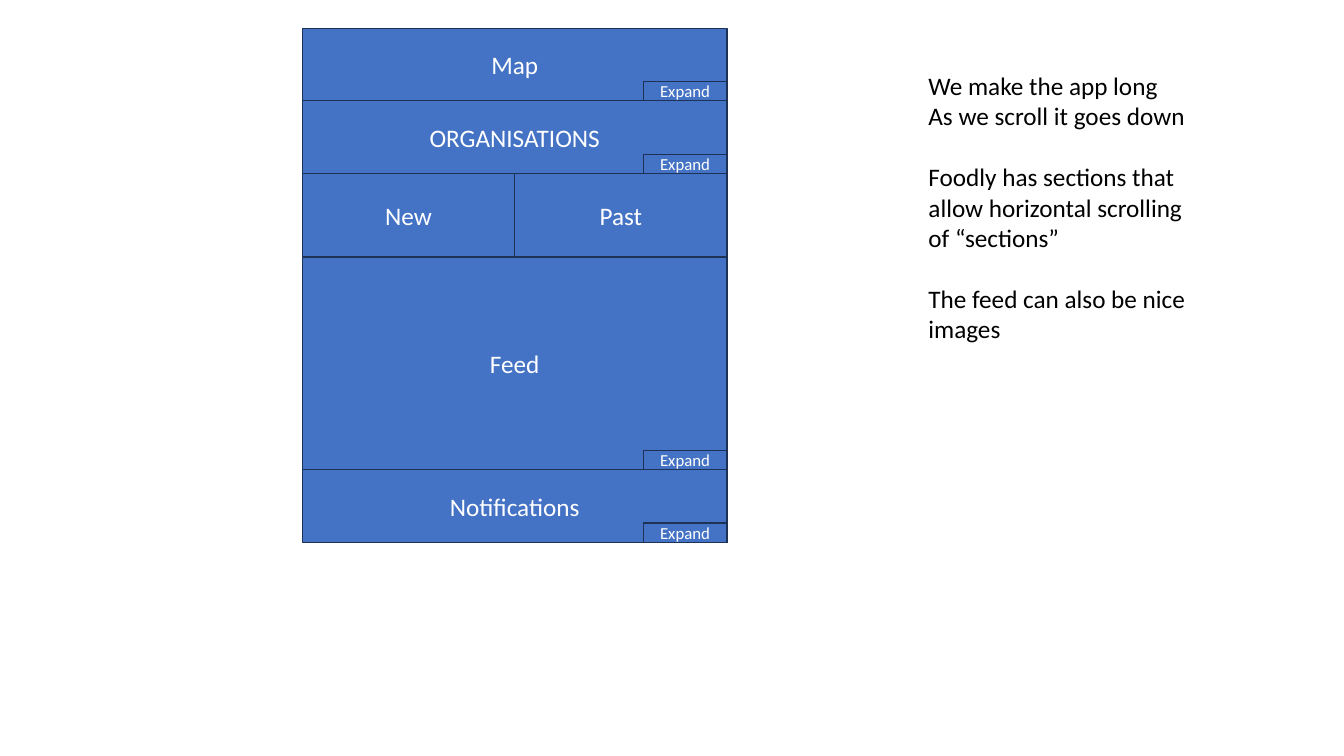
from pptx import Presentation
from pptx.dml.color import RGBColor
from pptx.enum.shapes import MSO_SHAPE
from pptx.enum.text import MSO_ANCHOR, MSO_AUTO_SIZE, PP_ALIGN
from pptx.util import Inches, Pt

RECT = MSO_SHAPE.RECTANGLE
MIDDLE = MSO_ANCHOR.MIDDLE
GROW = MSO_AUTO_SIZE.SHAPE_TO_FIT_TEXT
LEFT, CENTER = PP_ALIGN.LEFT, PP_ALIGN.CENTER
BLUE, NAVY, WHITE, BLACK = "4472C4", "1E3256", "FFFFFF", "000000"

ROWS = [
    (0.72, ["Map"], True),
    (0.72, ["ORGANISATIONS"], True),
    (0.83, ["New", "Past"], False),
    (2.11, ["Feed"], True),
    (0.72, ["Notifications"], True),
]
NOTES = [
    ("We make the app long", 0),
    ("As we scroll it goes down", 0),
    ("Foodly has sections that allow horizontal scrolling of “sections”", 22),
    ("The feed can also be nice images", 22),
]


def color(code):
    """Turn a hex string into a colour."""
    return RGBColor.from_string(code)


def write(para, text, size=18, ink=BLACK, align=LEFT, before=0):
    """Put formatted text into a paragraph."""
    para.alignment = align
    para.space_before = Pt(before)
    run = para.add_run()
    run.text = text
    run.font.name = "Calibri"
    run.font.size = Pt(size)
    run.font.color.rgb = color(ink)


def add_block(slide, text, left, top, width, height, size=18):
    """Draw one labelled rectangle."""
    block = slide.shapes.add_shape(
        RECT, Inches(left), Inches(top), Inches(width), Inches(height))
    block.shadow.inherit = False
    block.fill.solid()
    block.fill.fore_color.rgb = color(BLUE)
    block.line.color.rgb = color(NAVY)
    block.line.width = Pt(1)
    frame = block.text_frame
    frame.word_wrap = True
    frame.vertical_anchor = MIDDLE
    write(frame.paragraphs[0], text, size=size, ink=WHITE, align=CENTER)


def add_app(slide, left, top, width):
    """Stack the app sections downward, with their expand buttons."""
    wide, high = 0.83, 0.19
    for height, labels, expands in ROWS:
        part = width / len(labels)
        for col, label in enumerate(labels):
            add_block(slide, label, left + col * part, top, part, height)
        top += height
        if expands:
            add_block(slide, "Expand", left + width - wide, top - high,
                      wide, high, size=12)


def add_notes(slide, left, top, width, height):
    """Write the design notes in a text box."""
    box = slide.shapes.add_textbox(
        Inches(left), Inches(top), Inches(width), Inches(height))
    frame = box.text_frame
    frame.word_wrap = True
    frame.auto_size = GROW
    for row, (text, before) in enumerate(NOTES):
        para = frame.add_paragraph() if row else frame.paragraphs[0]
        write(para, text, before=before)


def main():
    """Build the slide and save it."""
    deck = Presentation()
    deck.slide_width = Inches(13.33)
    deck.slide_height = Inches(7.5)
    slide = deck.slides.add_slide(deck.slide_layouts[6])
    add_app(slide, 3, 0.28, 4.21)
    add_notes(slide, 9.11, 0.65, 2.95, 3.74)
    deck.save("out.pptx")


if __name__ == "__main__":
    main()
